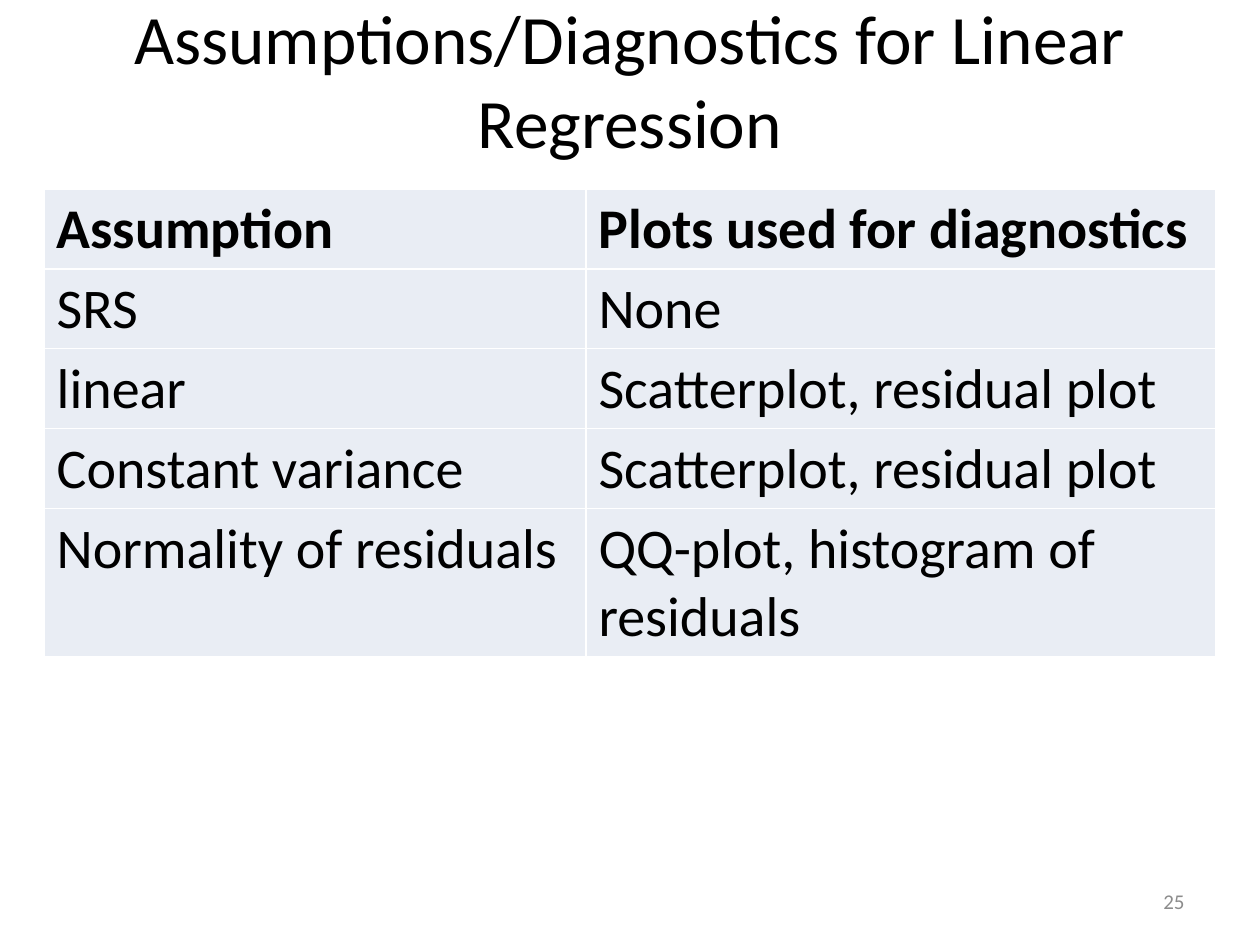
import pptx
import pptx.util
import pptx.dml.color
import pptx.enum.text
import pptx.oxml
import pptx.oxml.ns

ALIGN = pptx.enum.text.PP_ALIGN
ANCHOR = pptx.enum.text.MSO_ANCHOR
THEME = {
    "font": "Calibri", "ink": "000000", "muted": "8C8C8C",
    "band": "E9EDF4", "rule": "FFFFFF", "rule_pt": 1,
    "title_pt": 39.6, "body_pt": 32, "number_pt": 12,
}


def write(frame, text, size, color=THEME["ink"], bold=False, align=ALIGN.LEFT):
    frame.word_wrap = True
    paragraph = frame.paragraphs[0]
    paragraph.alignment = align
    run = paragraph.add_run()
    run.text = text
    run.font.name = THEME["font"]
    run.font.size = pptx.util.Pt(size)
    run.font.bold = bold
    run.font.color.rgb = pptx.dml.color.RGBColor.from_string(color)


deck = pptx.Presentation()
deck.slide_width = pptx.util.Inches(10)
deck.slide_height = pptx.util.Inches(7.5)
column = deck.slide_width // 200
row = deck.slide_height // 150
slide = deck.slides.add_slide(deck.slide_layouts[6])

title = slide.shapes.add_textbox(10 * column, 0, 180 * column, 25 * row).text_frame
title.vertical_anchor = ANCHOR.MIDDLE
write(title, "Assumptions/Diagnostics for Linear Regression",
      THEME["title_pt"], align=ALIGN.CENTER)

page_number = slide.shapes.add_textbox(
    143.4 * column, 139 * row, 46.6 * column, 8 * row).text_frame
page_number.vertical_anchor = ANCHOR.MIDDLE
write(page_number, "25", THEME["number_pt"], THEME["muted"], align=ALIGN.RIGHT)

diagnostics = [
    ("Assumption", "Plots used for diagnostics"),
    ("SRS", "None"),
    ("linear", "Scatterplot, residual plot"),
    ("Constant variance", "Scatterplot, residual plot"),
    ("Normality of residuals", "QQ-plot, histogram of residuals"),
]
grid = slide.shapes.add_table(
    len(diagnostics), 2, 7 * column, 30 * row, 186 * column, 74 * row).table
grid.horz_banding = False
for index, share in enumerate((86, 100)):
    grid.columns[index].width = share * column
for index, share in enumerate((12.6, 12.6, 12.6, 12.6, 23.6)):
    grid.rows[index].height = int(share * row)

for r, entries in enumerate(diagnostics):
    for c, entry in enumerate(entries):
        cell = grid.cell(r, c)
        write(cell.text_frame, entry, THEME["body_pt"], bold=r == 0)
        cell.fill.solid()
        cell.fill.fore_color.rgb = pptx.dml.color.RGBColor.from_string(THEME["band"])
        properties = cell._tc.get_or_add_tcPr()
        for position, edge in enumerate(("lnL", "lnR", "lnT", "lnB")):
            properties.insert(position, pptx.oxml.parse_xml(
                f'<a:{edge} {pptx.oxml.ns.nsdecls("a")} '
                f'w="{pptx.util.Pt(THEME["rule_pt"])}"><a:solidFill>'
                f'<a:srgbClr val="{THEME["rule"]}"/></a:solidFill></a:{edge}>'))

deck.save("out.pptx")
